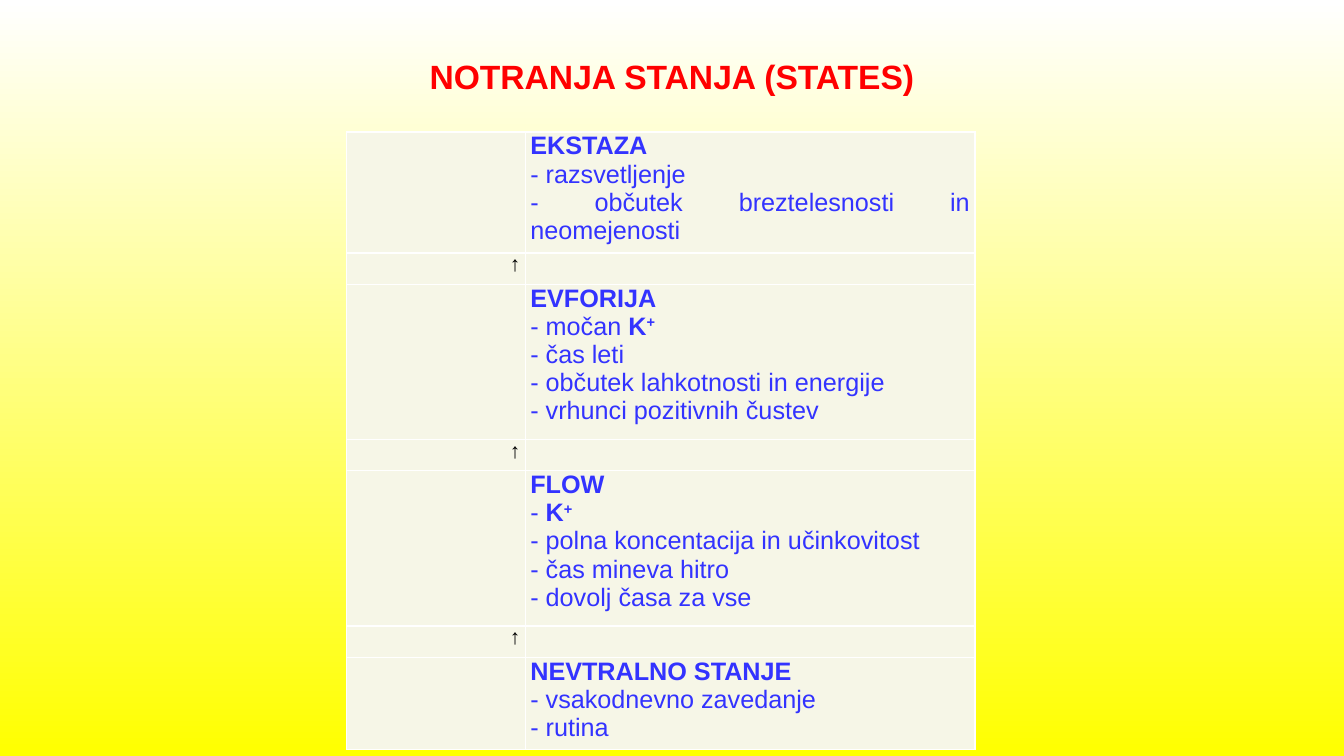
from pptx import Presentation
from pptx.dml.color import RGBColor
from pptx.enum.text import PP_ALIGN
from pptx.oxml import parse_xml
from pptx.oxml.ns import nsdecls
from pptx.util import Inches, Pt

LEFT, RIGHT, CENTER, JUST = (
    PP_ALIGN.LEFT, PP_ALIGN.RIGHT, PP_ALIGN.CENTER, PP_ALIGN.JUSTIFY)
WHITE = RGBColor(0xFF, 0xFF, 0xFF)
YELLOW = RGBColor(0xFF, 0xFF, 0x00)
RED = RGBColor(0xFF, 0x00, 0x00)
BLUE = RGBColor(0x33, 0x33, 0xFF)
BLACK = RGBColor(0x00, 0x00, 0x00)
CREAM = RGBColor(0xF6, 0xF6, 0xE7)

COLS = [1.77, 4.46]
ARROW_H = 0.31
# Each state: row height, name, traits; K+ gets a raised plus sign
STATES = [
    (1.2, "EKSTAZA", ["razsvetljenje",
                      "občutek breztelesnosti in neomejenosti"]),
    (1.54, "EVFORIJA", ["močan K+", "čas leti",
                        "občutek lahkotnosti in energije",
                        "vrhunci pozitivnih čustev"]),
    (1.54, "FLOW", ["K+", "polna koncentacija in učinkovitost",
                    "čas mineva hitro", "dovolj časa za vse"]),
    (0.92, "NEVTRALNO STANJE", ["vsakodnevno zavedanje", "rutina"]),
]


def add_run(para, text, size, color, bold=False, face="Arial"):
    run = para.add_run()
    run.text = text
    font = run.font
    font.name, font.size, font.bold = face, Pt(size), bold
    font.color.rgb = color
    return run


def paint_back(slide):
    fill = slide.background.fill
    fill.gradient()
    fill.gradient_angle = 270
    for stop, color in zip(fill.gradient_stops, (WHITE, YELLOW)):
        stop.color.rgb = color


def add_title(slide, text):
    box = slide.shapes.add_textbox(
        Inches(3.83), Inches(0.51), Inches(5.67), Inches(0.5))
    box.text_frame.word_wrap = True
    para = box.text_frame.paragraphs[0]
    para.alignment = CENTER
    add_run(para, text, 24, RED, True)


def style_cell(cell):
    cell.margin_left = cell.margin_right = Inches(0.05)
    cell.margin_top = cell.margin_bottom = 0
    props = cell._tc.get_or_add_tcPr()
    for side in "LRTB":
        props.append(parse_xml(
            f'<a:ln{side} w="12700" {nsdecls("a")}><a:solidFill>'
            f'<a:srgbClr val="{WHITE}"/></a:solidFill></a:ln{side}>'))
    cell.fill.solid()
    cell.fill.fore_color.rgb = CREAM


def fill_state(cell, name, traits):
    frame = cell.text_frame
    para = frame.paragraphs[0]
    para.alignment = JUST
    add_run(para, name, 18, BLUE, True)
    for trait in traits:
        para = frame.add_paragraph()
        para.alignment = JUST
        lead, mark, _ = trait.partition("K+")
        add_run(para, "- " + lead, 18, BLUE)
        if mark:
            add_run(para, "K", 18, BLUE, True)
            plus = add_run(para, "+", 18, BLUE, True)
            plus.font._element.set("baseline", "30000")


def fill_arrow(cell):
    para = cell.text_frame.paragraphs[0]
    para.alignment = RIGHT
    add_run(para, "↑", 15, BLACK, face="Times New Roman")


def add_states(slide):
    count = 2 * len(STATES) - 1
    total = sum(state[0] for state in STATES) + ARROW_H * (len(STATES) - 1)
    table = slide.shapes.add_table(
        count, len(COLS), Inches(3.44), Inches(1.31),
        Inches(sum(COLS)), Inches(total)).table
    table.first_row = table.horz_banding = False
    for col, width in zip(table.columns, COLS):
        col.width = Inches(width)
    for cell in table.iter_cells():
        style_cell(cell)
    # States on even rows, arrows between them
    for i, (height, name, traits) in enumerate(STATES):
        row = 2 * i
        table.rows[row].height = Inches(height)
        fill_state(table.cell(row, 1), name, traits)
        if row + 1 < count:
            table.rows[row + 1].height = Inches(ARROW_H)
            fill_arrow(table.cell(row + 1, 0))


def main():
    deck = Presentation()
    deck.slide_width, deck.slide_height = Inches(13.33), Inches(7.5)
    slide = deck.slides.add_slide(deck.slide_layouts[6])
    paint_back(slide)
    add_title(slide, "NOTRANJA STANJA (STATES)")
    add_states(slide)
    deck.save("out.pptx")


if __name__ == "__main__":
    main()
